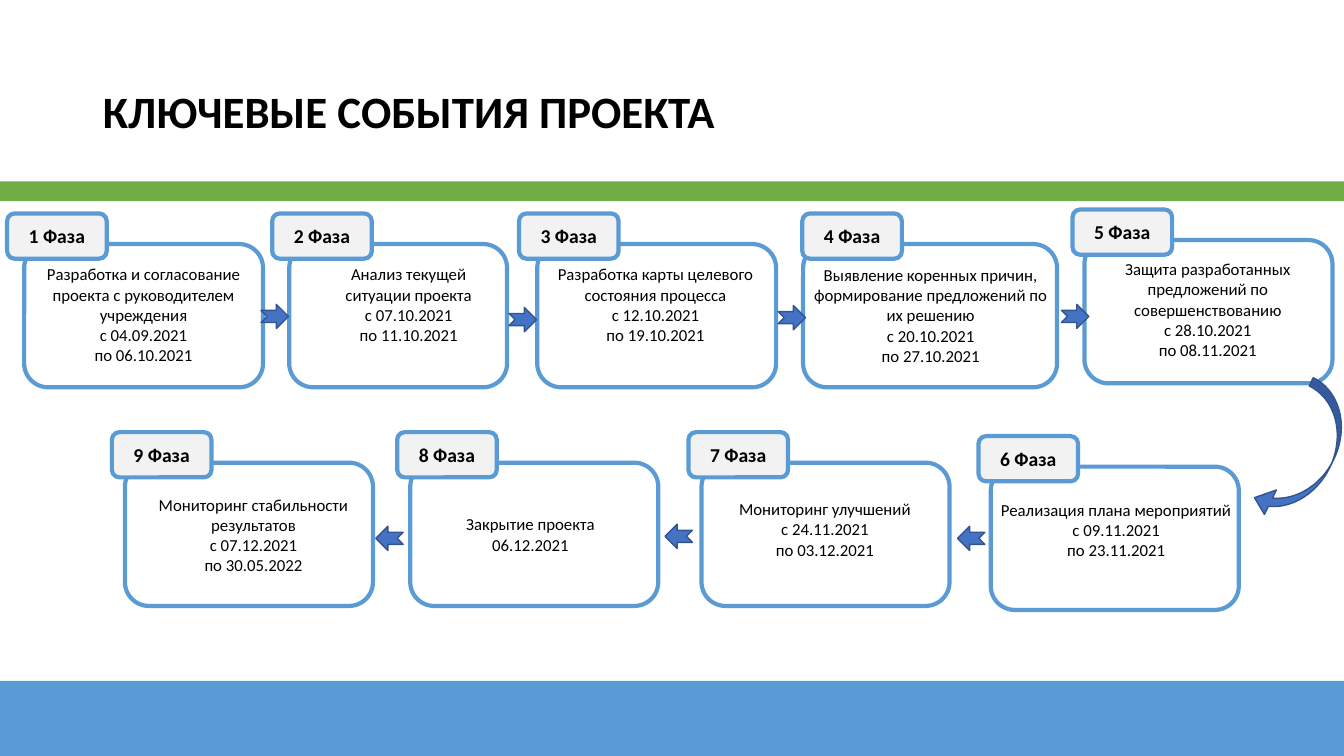
import pptx
import pptx.dml.color
import pptx.enum.shapes
import pptx.enum.text
import pptx.util

Cm = pptx.util.Cm
Pt = pptx.util.Pt
SHAPE = pptx.enum.shapes.MSO_SHAPE
ALIGN = pptx.enum.text.PP_ALIGN
ANCHOR = pptx.enum.text.MSO_ANCHOR


def rgb(value):
    return pptx.dml.color.RGBColor.from_string(value)


class PhaseSlide:
    font = "Calibri"
    black = "000000"
    blue = "5B9BD5"
    green = "70AD47"
    gray = "F2F2F2"
    arrow_fill = "4472C4"
    arrow_line = "325491"
    box_height = 3.61
    tag_rise = 0.77
    tag_size = (2.51, 1.14)
    arrow_size = (0.69, 0.61)

    def __init__(self, prs):
        self.slide = prs.slides.add_slide(prs.slide_layouts[5])

    def shape(self, kind, x, y, w, h, fill=None, line=None, weight=3):
        sp = self.slide.shapes.add_shape(kind, Cm(x), Cm(y), Cm(w), Cm(h))
        sp.shadow.inherit = False
        if fill:
            sp.fill.solid()
            sp.fill.fore_color.rgb = rgb(fill)
        else:
            sp.fill.background()
        if line:
            sp.line.color.rgb = rgb(line)
            sp.line.width = Pt(weight)
        else:
            sp.line.fill.background()
        return sp

    def set_lines(self, tf, lines, size, bold=False, align=ALIGN.CENTER):
        tf.word_wrap = True
        for i, line in enumerate(lines):
            p = tf.paragraphs[0] if i == 0 else tf.add_paragraph()
            p.text = line
            p.alignment = align
            p.font.name = self.font
            p.font.size = Pt(size)
            p.font.bold = bold
            p.font.color.rgb = rgb(self.black)

    def title(self, text, x, y, w, h):
        sp = self.slide.shapes.title
        sp.left, sp.top, sp.width, sp.height = Cm(x), Cm(y), Cm(w), Cm(h)
        tf = sp.text_frame
        tf.vertical_anchor = ANCHOR.MIDDLE
        self.set_lines(tf, [text], 32, True, ALIGN.LEFT)
        tf.paragraphs[0].line_spacing = 0.9

    def band(self, y, h, color):
        self.shape(SHAPE.RECTANGLE, 0, y, 33.87, h, color)

    def box(self, x, y, w):
        self.shape(SHAPE.ROUNDED_RECTANGLE, x, y, w, self.box_height, line=self.blue)

    def tag(self, x, y, text):
        sp = self.shape(SHAPE.ROUNDED_RECTANGLE, x, y, *self.tag_size, self.gray, self.blue)
        sp.text_frame.vertical_anchor = ANCHOR.MIDDLE
        self.set_lines(sp.text_frame, [text], 14, True)

    def text(self, x, y, w, h, lines):
        sp = self.slide.shapes.add_textbox(Cm(x), Cm(y), Cm(w), Cm(h))
        self.set_lines(sp.text_frame, lines, 12)
        sp.text_frame.auto_size = pptx.enum.text.MSO_AUTO_SIZE.SHAPE_TO_FIT_TEXT

    def phase(self, number, box, tag_x, text, lines):
        self.box(*box)
        self.tag(tag_x, box[1] - self.tag_rise, f"{number} Фаза")
        self.text(*text, lines)

    def arrow(self, x, y, rotation=0):
        sp = self.shape(SHAPE.NOTCHED_RIGHT_ARROW, x, y, *self.arrow_size,
                        self.arrow_fill, self.arrow_line, 1)
        sp.rotation = rotation

    def turn(self, x, y, w, h):
        sp = self.shape(SHAPE.CURVED_LEFT_ARROW, x, y, w, h,
                        self.arrow_fill, self.arrow_line, 1)
        sp.rotation = 26.1
        for i, value in enumerate((0.17, 0.5, 0.3)):
            sp.adjustments[i] = value


PHASES = [
    ((0.61, 6.15, 6.02), 0.18, (0.18, 6.53, 6.88, 2.82),
     ["Разработка и согласование проекта с руководителем учреждения",
      "с 04.09.2021", "по 06.10.2021"]),
    ((7.29, 6.15, 5.49), 6.86, (6.86, 6.53, 6.88, 2.31),
     ["Анализ текущей", "ситуации проекта", "с 07.10.2021", "по 11.10.2021"]),
    ((13.54, 6.15, 6.02), 13.08, (13.08, 6.53, 6.88, 2.31),
     ["Разработка карты целевого состояния процесса", "с 12.10.2021", "по 19.10.2021"]),
    ((20.24, 6.15, 6.4), 20.22, (20.19, 6.55, 6.53, 2.82),
     ["Выявление коренных причин, формирование предложений по их решению",
      "с 20.10.2021", "по 27.10.2021"]),
    ((27.33, 6.05, 6.25), 27.03, (27, 6.4, 6.88, 2.82),
     ["Защита разработанных предложений по совершенствованию",
      "с 28.10.2021", "по 08.11.2021"]),
    ((24.97, 11.76, 6.25), 24.66, (24.69, 12.47, 6.88, 1.8),
     ["Реализация плана мероприятий", "с 09.11.2021", "по 23.11.2021"]),
    ((17.68, 11.66, 6.25), 17.35, (17.35, 12.45, 6.88, 1.8),
     ["Мониторинг улучшений", "с 24.11.2021", "по 03.12.2021"]),
    ((10.34, 11.66, 6.25), 10.01, (9.93, 12.83, 6.88, 1.27),
     ["Закрытие проекта", "06.12.2021"]),
    ((3.15, 11.66, 6.25), 2.82, (2.95, 12.34, 6.88, 2.31),
     ["Мониторинг стабильности результатов", "с 07.12.2021", "по 30.05.2022"]),
]
RIGHT_ARROWS = [(6.58, 7.67), (12.83, 7.75), (19.61, 7.7), (26.75, 7.67)]
LEFT_ARROWS = [(24.13, 13.26), (16.76, 13.21), (9.47, 13.26)]


def main():
    prs = pptx.Presentation()
    prs.slide_width = Cm(33.87)
    prs.slide_height = Cm(19.05)
    s = PhaseSlide(prs)
    s.band(17.16, 1.89, s.blue)
    s.band(4.57, 0.5, s.green)
    s.title("КЛЮЧЕВЫЕ СОБЫТИЯ ПРОЕКТА", 2.34, 1.02, 29.21, 3.68)
    for number, phase in enumerate(PHASES, 1):
        s.phase(number, *phase)
    s.turn(32.21, 9.63, 1.37, 3.71)
    for x, y in RIGHT_ARROWS:
        s.arrow(x, y)
    for x, y in LEFT_ARROWS:
        s.arrow(x, y, 180)
    prs.save("out.pptx")


if __name__ == "__main__":
    main()
